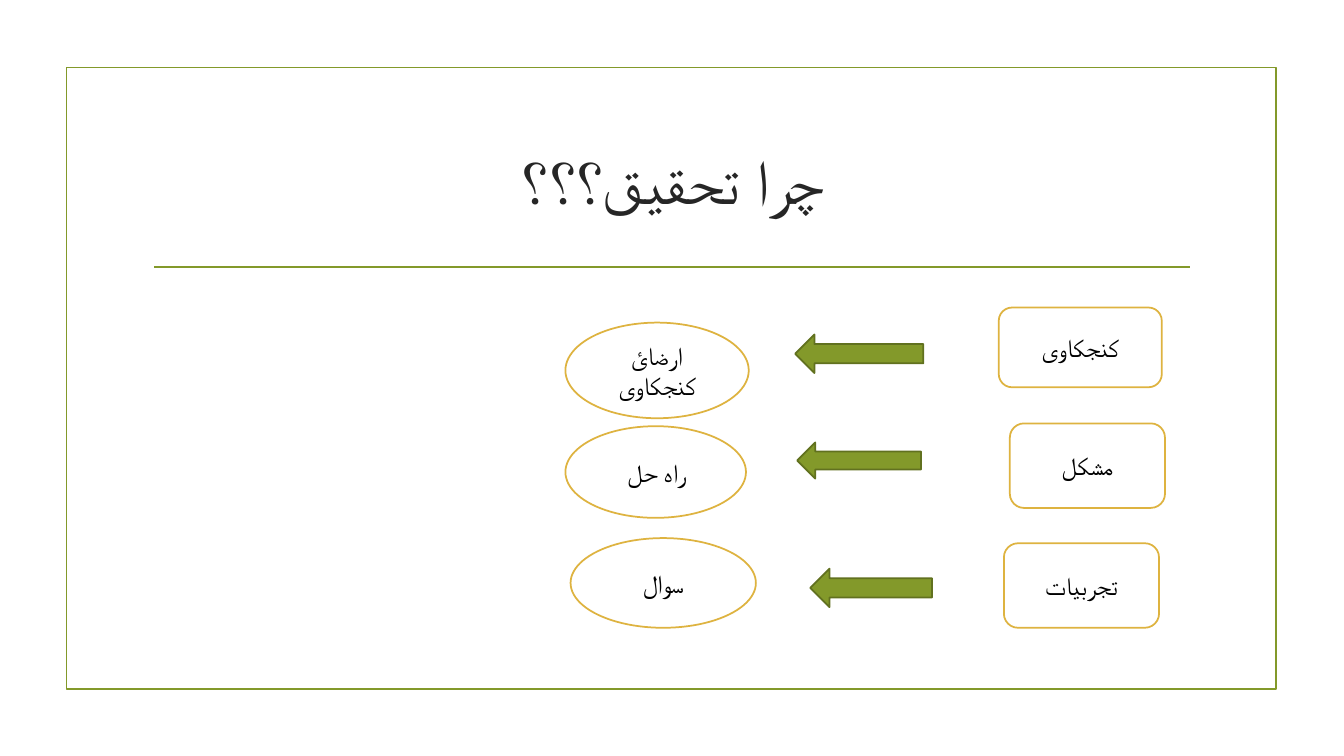
from dataclasses import dataclass

from lxml.etree import SubElement
from pptx import Presentation
from pptx.dml.color import RGBColor
from pptx.enum.shapes import MSO_CONNECTOR, MSO_SHAPE
from pptx.enum.text import MSO_ANCHOR, PP_ALIGN
from pptx.oxml.ns import qn
from pptx.util import Cm, Pt


@dataclass(frozen=True)
class Theme:
    green: RGBColor = RGBColor.from_string("83992A")
    dark_green: RGBColor = RGBColor.from_string("61711F")
    gold: RGBColor = RGBColor.from_string("DEB340")
    white: RGBColor = RGBColor.from_string("FFFFFF")
    title_color: RGBColor = RGBColor.from_string("262626")
    label_color: RGBColor = RGBColor.from_string("000000")
    font: str = "Times New Roman"
    title_size: Pt = Pt(44)
    label_size: Pt = Pt(18)
    line_width: Pt = Pt(1.25)


theme = Theme()
presentation = Presentation()
presentation.slide_width = Cm(33.87)
presentation.slide_height = Cm(19.05)
slide = presentation.slides.add_slide(presentation.slide_layouts[6])


def add_figure(kind, place, fill, line):
    """Add a preset shape; place is left, top, width, height in cm."""
    shape = slide.shapes.add_shape(kind, *map(Cm, place))
    shape.shadow.inherit = False
    if fill is None:
        shape.fill.background()
    else:
        shape.fill.solid()
        shape.fill.fore_color.rgb = fill
    shape.line.color.rgb = line
    shape.line.width = theme.line_width
    return shape


def write_centred(shape, text, size, color):
    frame = shape.text_frame
    frame.word_wrap = True
    frame.vertical_anchor = MSO_ANCHOR.MIDDLE
    paragraph = frame.paragraphs[0]
    paragraph.text = text
    paragraph.alignment = PP_ALIGN.CENTER
    font = paragraph.font
    font.name = theme.font
    font.size = size
    font.color.rgb = color
    # Persian text takes its typeface from the complex-script font
    properties = paragraph._p.pPr.find(qn("a:defRPr"))
    SubElement(properties, qn("a:cs"), typeface=theme.font)
    return paragraph


add_figure(MSO_SHAPE.RECTANGLE, (1.68, 1.7, 30.48, 15.67), None, theme.green)

rule = slide.shapes.add_connector(
    MSO_CONNECTOR.STRAIGHT, Cm(3.89), Cm(6.73), Cm(30), Cm(6.73))
rule.line.color.rgb = theme.green
rule.line.width = theme.line_width
SubElement(rule._element.spPr, qn("a:effectLst"))

title = slide.shapes.add_textbox(Cm(3.61), Cm(2.72), Cm(26.67), Cm(3.63))
title_paragraph = write_centred(
    title, "چرا تحقیق؟؟؟", theme.title_size, theme.title_color)
title_paragraph._p.pPr.set("rtl", "1")

# Each row reads right to left: cause, arrow, result
rows = [
    ("کنجکاوی", (25.17, 7.75, 4.11, 2.01), (20.04, 8.43, 3.23, 0.97),
     "ارضائ کنجکاوی", (14.25, 8.13, 4.62, 2.41)),
    ("مشکل", (25.45, 10.67, 3.91, 2.13), (20.09, 11.15, 3.12, 0.91),
     "راه حل", (14.25, 10.74, 4.55, 2.31)),
    ("تجربیات", (25.3, 13.69, 3.91, 2.13), (20.42, 14.33, 3.07, 0.97),
     "سوال", (14.38, 13.56, 4.67, 2.26)),
]
for cause, cause_place, arrow_place, result, result_place in rows:
    add_figure(MSO_SHAPE.LEFT_ARROW, arrow_place, theme.green, theme.dark_green)
    for kind, place, text in (
        (MSO_SHAPE.ROUNDED_RECTANGLE, cause_place, cause),
        (MSO_SHAPE.OVAL, result_place, result),
    ):
        shape = add_figure(kind, place, theme.white, theme.gold)
        write_centred(shape, text, theme.label_size, theme.label_color)

presentation.save("out.pptx")
